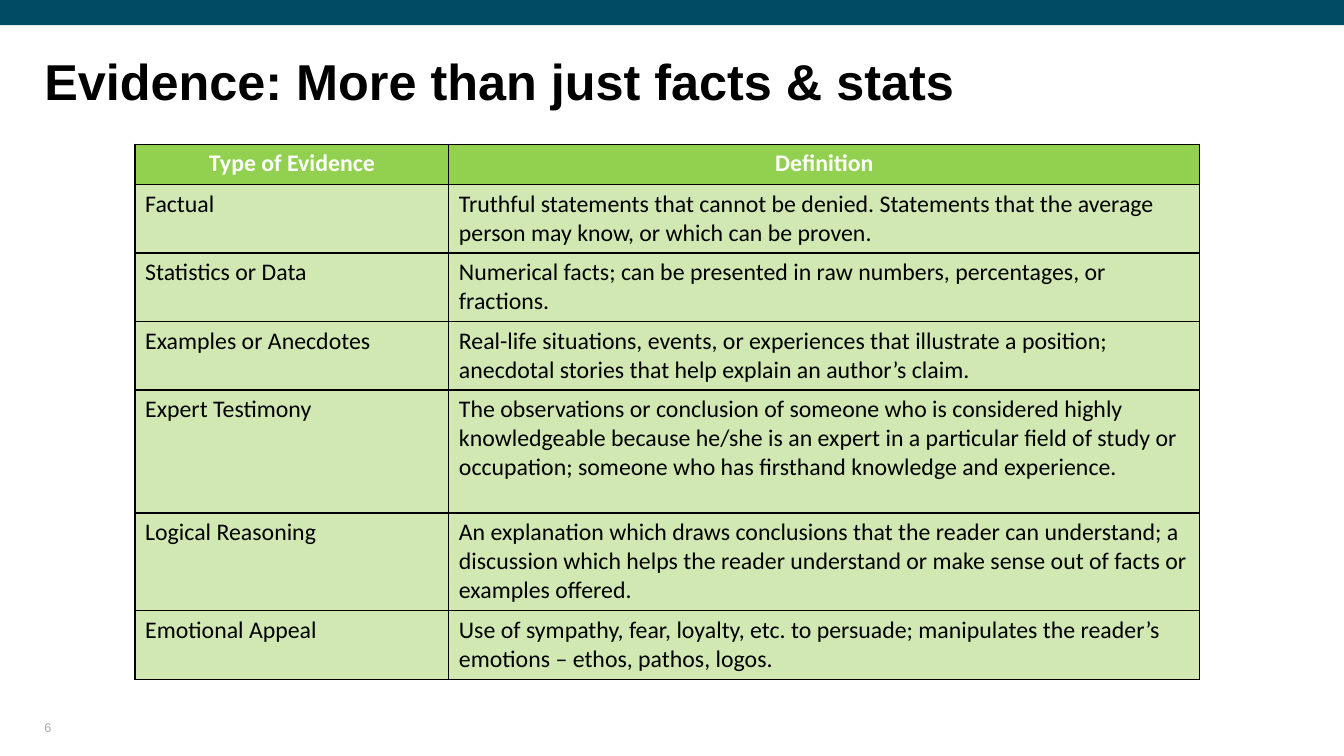
from lxml.etree import SubElement
from pptx import Presentation
from pptx.dml.color import RGBColor
from pptx.enum.shapes import MSO_SHAPE as Shape
from pptx.enum.text import MSO_ANCHOR as Anchor, PP_ALIGN as Align
from pptx.oxml.ns import qn
from pptx.util import Inches, Pt

BLACK = RGBColor(0x00, 0x00, 0x00)
WHITE = RGBColor(0xFF, 0xFF, 0xFF)
TEAL = RGBColor(0x01, 0x4B, 0x64)
GREY = RGBColor(0xAF, 0xAB, 0xAB)
GREEN = RGBColor(0x92, 0xD0, 0x50)
PALE_GREEN = RGBColor(0xD1, 0xE8, 0xB2)

MARGIN = 3.3
COLUMN_WIDTHS = (23.35, 55.88)
HEADINGS = ("Type of Evidence", "Definition")
EVIDENCE = (
    (9.07, "Factual",
     "Truthful statements that cannot be denied. Statements that the average "
     "person may know, or which can be proven."),
    (9.07, "Statistics or Data",
     "Numerical facts; can be presented in raw numbers, percentages, or fractions."),
    (9.07, "Examples or Anecdotes",
     "Real-life situations, events, or experiences that illustrate a position; "
     "anecdotal stories that help explain an author’s claim."),
    (16.27, "Expert Testimony",
     "The observations or conclusion of someone who is considered highly "
     "knowledgeable because he/she is an expert in a particular field of study or "
     "occupation; someone who has firsthand knowledge and experience."),
    (12.93, "Logical Reasoning",
     "An explanation which draws conclusions that the reader can understand; a "
     "discussion which helps the reader understand or make sense out of facts or "
     "examples offered."),
    (9.07, "Emotional Appeal",
     "Use of sympathy, fear, loyalty, etc. to persuade; manipulates the reader’s "
     "emotions – ethos, pathos, logos."),
)


class SlideBuilder:
    """Places styled elements on one slide, with lengths in percent of its size."""

    heading_font = "Arial"
    table_font = "Calibri"
    table_size = 17

    def __init__(self, deck):
        self.deck = deck
        self.slide = deck.slides.add_slide(deck.slide_layouts[6])

    def across(self, share):
        return round(self.deck.slide_width * share / 100)

    def down(self, share):
        return round(self.deck.slide_height * share / 100)

    def place(self, left, top, width, height):
        return self.across(left), self.down(top), self.across(width), self.down(height)

    def style(self, para, font, size, color, bold=False):
        for span in para.runs:
            span.font.name = font
            span.font.size = Pt(size)
            span.font.color.rgb = color
            span.font.bold = bold

    def band(self, area, color):
        band = self.slide.shapes.add_shape(Shape.RECTANGLE, *self.place(*area))
        band.shadow.inherit = False
        band.fill.solid()
        band.fill.fore_color.rgb = color
        band.line.fill.background()

    def text(self, area, words, size, color, bold=False, anchor=Anchor.TOP, spacing=1.0):
        frame = self.slide.shapes.add_textbox(*self.place(*area)).text_frame
        frame.word_wrap = True
        frame.vertical_anchor = anchor
        frame.margin_left = frame.margin_right = 0
        frame.margin_top = frame.margin_bottom = 0
        frame.text = words
        para = frame.paragraphs[0]
        para.line_spacing = spacing
        self.style(para, self.heading_font, size, color, bold)

    def cell(self, cell, words, fill, color, bold, align):
        cell.text = words
        para = cell.text_frame.paragraphs[0]
        para.alignment = align
        self.style(para, self.table_font, self.table_size, color, bold)
        properties = cell._tc.get_or_add_tcPr()
        for side in ("a:lnL", "a:lnR", "a:lnT", "a:lnB"):
            border = SubElement(properties, qn(side), w=str(Pt(1)))
            paint = SubElement(border, qn("a:solidFill"))
            SubElement(paint, qn("a:srgbClr"), val=str(BLACK))
        cell.fill.solid()
        cell.fill.fore_color.rgb = fill

    def table(self, left, top, widths, rows):
        area = self.place(left, top, sum(widths), sum(row[0] for row in rows))
        table = self.slide.shapes.add_table(len(rows), len(widths), *area).table
        for column, width in zip(table.columns, widths):
            column.width = self.across(width)
        for index, (height, *entries) in enumerate(rows):
            table.rows[index].height = self.down(height)
            if index == 0:
                look = (GREEN, WHITE, True, Align.CENTER)
            else:
                look = (PALE_GREEN, BLACK, False, Align.LEFT)
            for cell, words in zip(table.rows[index].cells, entries):
                self.cell(cell, words, *look)


def main():
    deck = Presentation()
    deck.slide_width, deck.slide_height = Inches(13.33), Inches(7.5)
    page = SlideBuilder(deck)
    page.band((0, 0, 100, 3.33), TEAL)
    page.text((MARGIN, 7.6, 93.1, 16.93), "Evidence: More than just facts & stats",
              36, BLACK, bold=True, spacing=0.9)
    page.text((MARGIN, 94, 22.5, 3.2), "6", 9, GREY, anchor=Anchor.BOTTOM)
    page.table(10.05, 19.07, COLUMN_WIDTHS, ((5.33, *HEADINGS), *EVIDENCE))
    deck.save("out.pptx")


if __name__ == "__main__":
    main()
